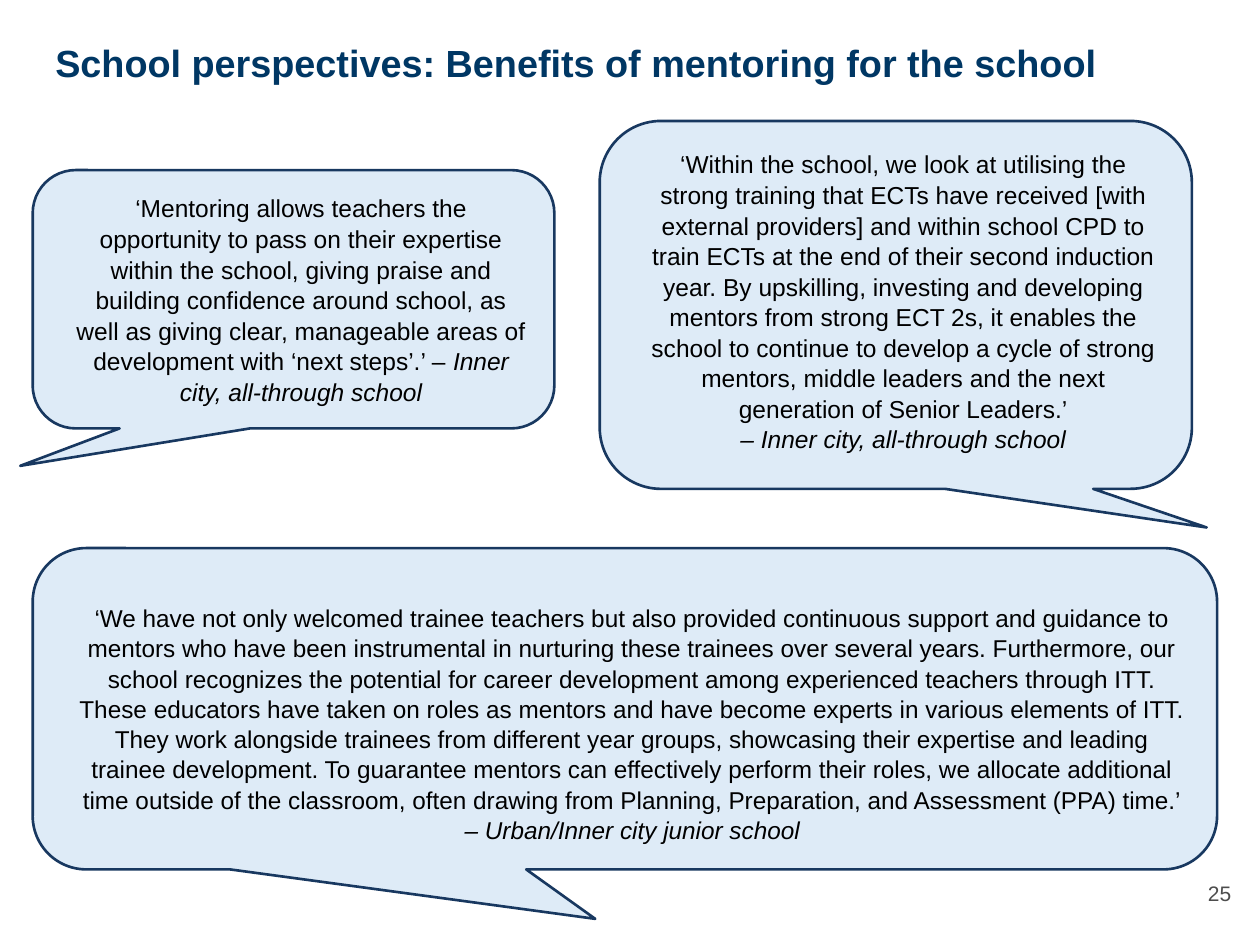
from pptx import Presentation
from pptx.dml.color import RGBColor
from pptx.enum import shapes, text
from pptx.util import Inches, Pt

NAVY = RGBColor(0x00, 0x37, 0x64)
OUTLINE = RGBColor(0x18, 0x38, 0x60)
PALE_BLUE = RGBColor(0xDE, 0xEB, 0xF7)
BLACK = RGBColor(0, 0, 0)
GREY = RGBColor(0x4D, 0x4D, 0x4D)

TITLE = "School perspectives: Benefits of mentoring for the school"
PAGE_NUMBER = "25"
QUOTES = [
    {
        "box": (4.76, 0.96, 4.7, 2.92), "tail": (0.525, 0.605),
        "size": 14, "top": 0.1, "bottom": 0.16,
        "paragraphs": [
            [("‘Within the school, we look at utilising the strong training that ECTs have "
              "received [with external providers] and within school CPD to train ECTs at the "
              "end of their second induction year. By upskilling, investing and developing "
              "mentors from strong ECT 2s, it enables the school to continue to develop a "
              "cycle of strong mentors, middle leaders and the next generation of Senior "
              "Leaders.’", False)],
            [("– Inner city, all-through school", True)],
        ],
    },
    {
        "box": (0.26, 1.35, 4.14, 2.05), "tail": (-0.524, 0.645),
        "size": 14, "top": 0.1, "bottom": 0.1,
        "paragraphs": [
            [("‘Mentoring allows teachers the opportunity to pass on their expertise within "
              "the school, giving praise and building confidence around school, as well as "
              "giving clear, manageable areas of development with ‘next steps’.’ – ", False),
             ("Inner city, all-through school", True)],
        ],
    },
    {
        "box": (0.26, 4.35, 9.4, 2.55), "tail": (-0.025, 0.654),
        "size": 13.9, "top": 0.33, "bottom": 0.1,
        "paragraphs": [
            [("‘We have not only welcomed trainee teachers but also provided continuous "
              "support and guidance to mentors who have been instrumental in nurturing these "
              "trainees over several years. Furthermore, our school recognizes the potential "
              "for career development among experienced teachers through ITT. These educators "
              "have taken on roles as mentors and have become experts in various elements of "
              "ITT. They work alongside trainees from different year groups, showcasing their "
              "expertise and leading trainee development. To guarantee mentors can effectively "
              "perform their roles, we allocate additional time outside of the classroom, "
              "often drawing from Planning, Preparation, and Assessment (PPA) time.’ ", False),
             ("– Urban/Inner city junior school", True)],
        ],
    },
]


def set_frame(frame, anchor, left=0.1, top=0.1, bottom=0.1):
    frame.word_wrap = True
    frame.vertical_anchor = anchor
    frame.margin_left, frame.margin_right = Inches(left), Inches(0.1)
    frame.margin_top, frame.margin_bottom = Inches(top), Inches(bottom)


def style(paragraph, size, color, align, spacing=1.0, bold=False):
    paragraph.alignment = align
    paragraph.line_spacing = spacing
    font = paragraph.font
    font.name, font.size, font.bold = "Arial", Pt(size), bold
    font.color.rgb = color


def add_label(slide, box, words, anchor, **look):
    frame = slide.shapes.add_textbox(*map(Inches, box)).text_frame
    set_frame(frame, anchor)
    frame.text = words
    style(frame.paragraphs[0], **look)


def add_quote(slide, quote):
    bubble = slide.shapes.add_shape(
        shapes.MSO_SHAPE.ROUNDED_RECTANGULAR_CALLOUT, *map(Inches, quote["box"]))
    for index, value in enumerate((*quote["tail"], 0.16667)):
        bubble.adjustments[index] = value
    bubble.shadow.inherit = False
    bubble.fill.solid()
    bubble.fill.fore_color.rgb = PALE_BLUE
    bubble.line.color.rgb = OUTLINE
    bubble.line.width = Pt(1.5)

    frame = bubble.text_frame
    set_frame(frame, text.MSO_ANCHOR.MIDDLE, 0.22, quote["top"], quote["bottom"])
    for index, parts in enumerate(quote["paragraphs"]):
        paragraph = frame.add_paragraph() if index else frame.paragraphs[0]
        style(paragraph, quote["size"], BLACK, text.PP_ALIGN.CENTER, spacing=1.04)
        for words, italic in parts:
            run = paragraph.add_run()
            run.text = words
            run.font.italic = italic


def main():
    deck = Presentation()
    deck.slide_width, deck.slide_height = Inches(10), Inches(7.5)
    slide = deck.slides.add_slide(deck.slide_layouts[6])
    add_label(slide, (9.27, 6.8, 0.6, 0.57), PAGE_NUMBER, text.MSO_ANCHOR.MIDDLE,
              size=12, color=GREY, align=text.PP_ALIGN.RIGHT)
    add_label(slide, (0.34, 0.26, 9.32, 0.84), TITLE, text.MSO_ANCHOR.TOP,
              size=21.6, color=NAVY, align=text.PP_ALIGN.LEFT, spacing=0.9, bold=True)
    for quote in QUOTES:
        add_quote(slide, quote)
    deck.save("out.pptx")


if __name__ == "__main__":
    main()
